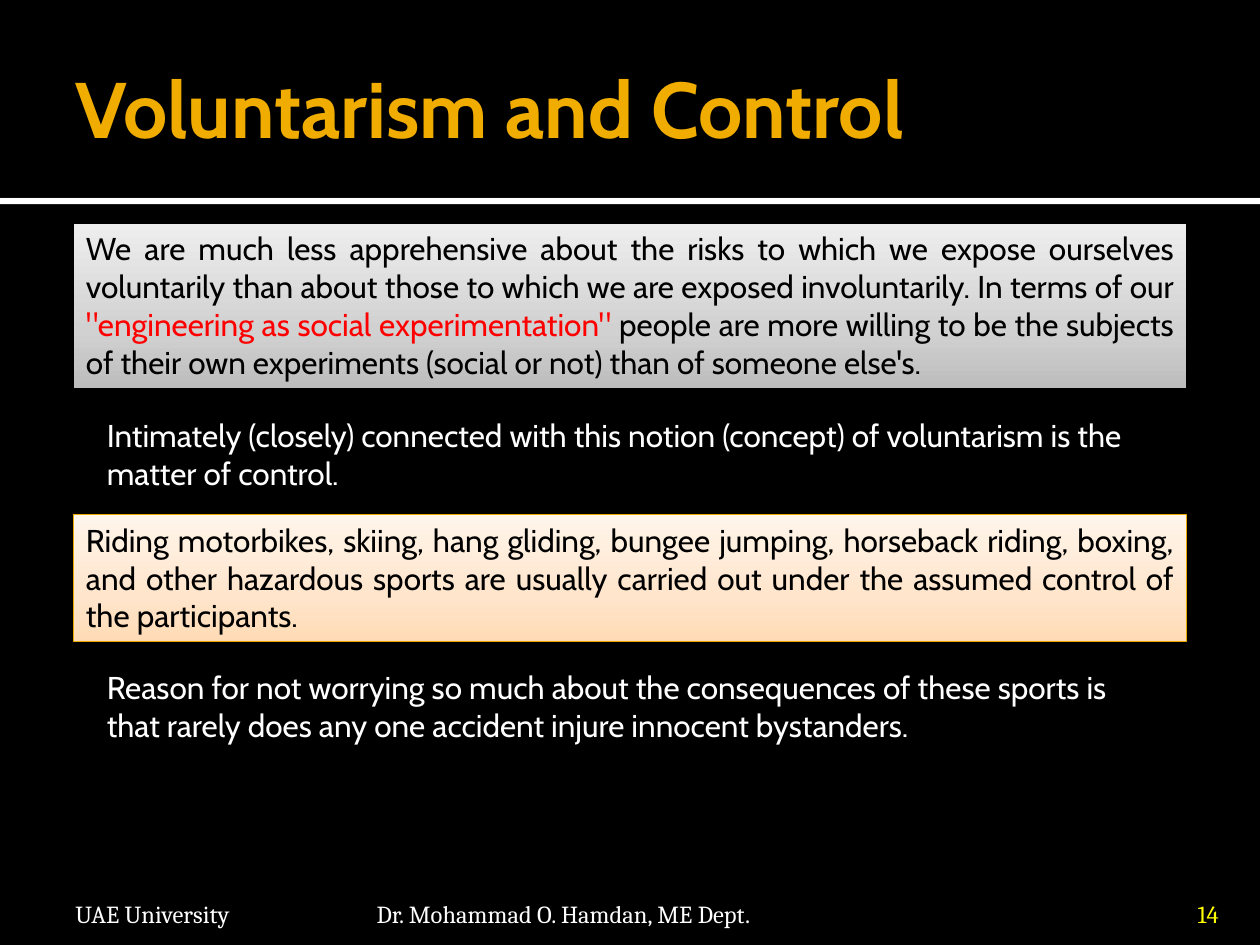
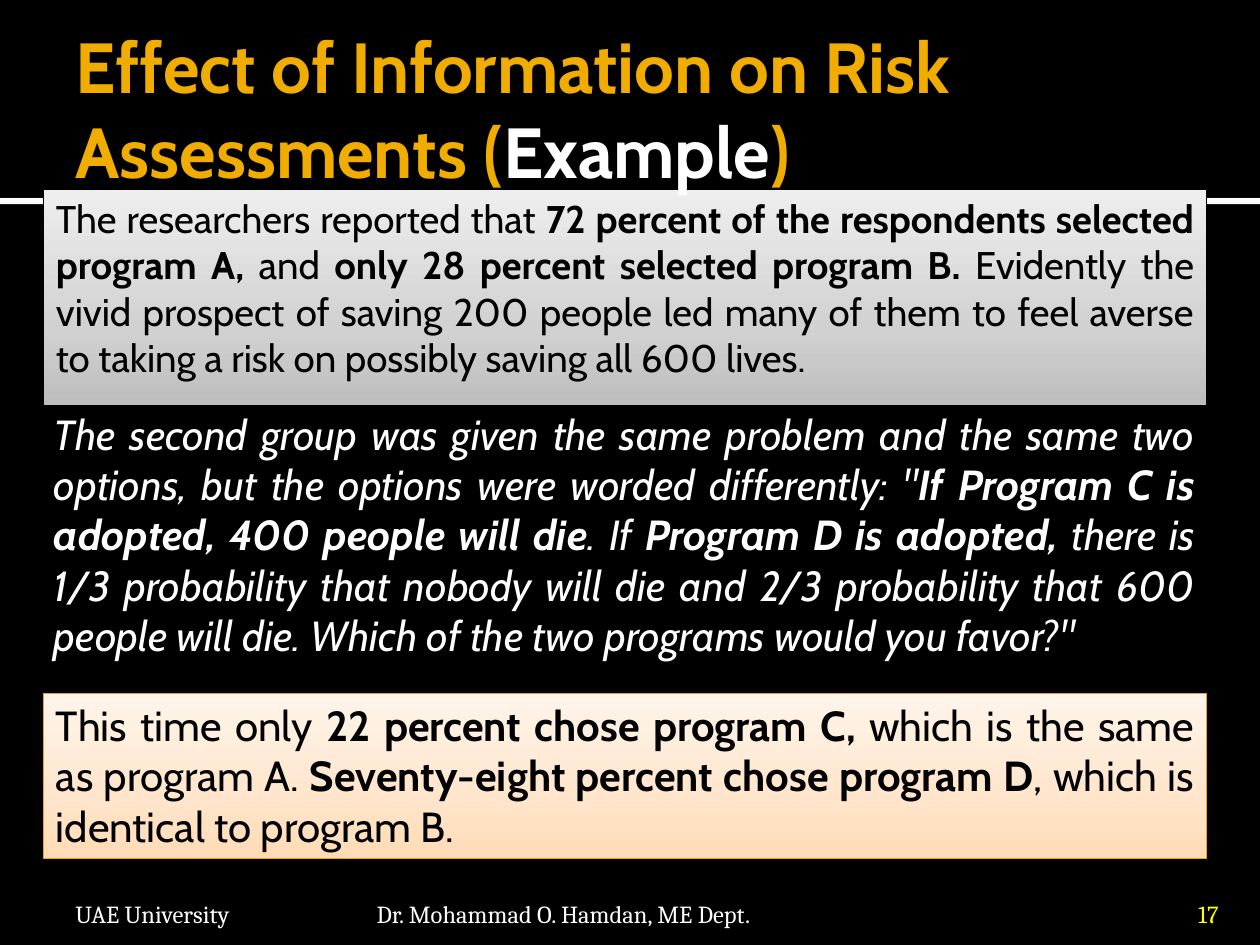
"""Build two lecture slides on risk: a title band, stacked statements and a footer."""
import copy
from dataclasses import dataclass

import pptx
import pptx.dml.color
import pptx.enum.shapes
import pptx.enum.text
import pptx.oxml.ns
import pptx.util

ALIGN = pptx.enum.text.PP_ALIGN
ANCHOR = pptx.enum.text.MSO_ANCHOR
COLUMNS, ROWS = 120, 90
CELL = pptx.util.Inches(10) / COLUMNS


@dataclass(frozen=True)
class Theme:
    """Hold the colours, fonts and type sizes of the deck."""
    black: str = "000000"
    white: str = "FFFFFF"
    gold: str = "F0AD00"
    red: str = "FF0000"
    yellow: str = "FFFF00"
    body_font: str = "Cabin"
    footer_font: str = "Cambria"
    title_size: float = 45
    long_title_size: float = 40.5
    body_size: float = 18
    dense_size: float = 22
    large_size: float = 24
    footer_size: float = 14


@dataclass(frozen=True)
class Panel:
    """Hold the outline and the gradient stops of a filled statement."""
    line: str
    stops: tuple


THEME = Theme()
GREY = Panel(THEME.black, ((0, "BDBDBD"), (0.35, "D1D1D1"), (1, "EEEEEE")))
CREAM = Panel("EBA900", ((0, "FFDBB5"), (0.35, "FFE5CB"), (1, "FFF5EB")))
BOLD = {"bold": True}
ITALIC = {"italic": True}
STRONG = {"bold": True, "italic": True}


def rgb(code):
    """Turn a hex code into a colour."""
    return pptx.dml.color.RGBColor.from_string(code)


def cells(*place):
    """Turn columns and rows of the grid into slide lengths."""
    return [round(value * CELL) for value in place]


def write(shape, spans, size, color, font=THEME.body_font, align=ALIGN.LEFT, anchor=ANCHOR.TOP):
    """Write one paragraph of plain strings and (string, format) pairs."""
    frame = shape.text_frame
    frame.word_wrap = True
    frame.vertical_anchor = anchor
    para = frame.paragraphs[0]
    para.alignment = align
    for part in spans:
        text, changes = (part, {}) if isinstance(part, str) else part
        span = para.add_run()
        span.text = text
        values = {"name": font, "size": pptx.util.Pt(size), "color": color, **changes}
        span.font.color.rgb = rgb(values.pop("color"))
        for name, value in values.items():
            setattr(span.font, name, value)


def add_text(page, place, spans, size, color=THEME.white, **layout):
    """Add a text box without a fill."""
    write(page.shapes.add_textbox(*cells(*place)), spans, size, color, **layout)


def add_rectangle(page, place):
    """Add a rectangle without a shadow."""
    box = page.shapes.add_shape(pptx.enum.shapes.MSO_SHAPE.RECTANGLE, *cells(*place))
    box.shadow.inherit = False
    return box


def add_band(page, place, color):
    """Add a plain band across the page."""
    band = add_rectangle(page, place)
    band.fill.solid()
    band.fill.fore_color.rgb = rgb(color)
    band.line.fill.background()


def add_panel(page, place, panel, spans, size):
    """Add a justified statement on a gradient that darkens downwards."""
    box = add_rectangle(page, place)
    box.fill.gradient()
    box.fill.gradient_angle = 90
    stop_list = next(box.element.iter(pptx.oxml.ns.qn("a:gsLst")))
    stop_list.append(copy.deepcopy(stop_list[-1]))
    for stop, (position, color) in zip(box.fill.gradient_stops, panel.stops):
        stop.position = position
        stop.color.rgb = rgb(color)
    box.line.color.rgb = rgb(panel.line)
    box.line.width = pptx.util.Pt(0.5)
    write(box, spans, size, THEME.black, align=ALIGN.JUSTIFY)


def add_page(deck):
    """Add a black page with the rule below its title area."""
    page = deck.slides.add_slide(deck.slide_layouts[6])
    page.background.fill.solid()
    page.background.fill.fore_color.rgb = rgb(THEME.black)
    add_band(page, (0, 18.84, COLUMNS, 0.6), THEME.white)
    add_band(page, (0, 0, COLUMNS, 18.84), THEME.black)
    return page


def add_title(page, spans, size):
    """Add the bold title, centred in the height of its area."""
    bold_spans = [(text, {**BOLD, **changes}) for text, changes in spans]
    add_text(page, (6, 2, 108, 16.44), bold_spans, size, THEME.gold, anchor=ANCHOR.MIDDLE)


def add_footer(page, number):
    """Add the institution, the lecturer and the page number."""
    for left, width, text, color, align in (
        (6, 28, "UAE University", THEME.white, ALIGN.LEFT),
        (34.68, 72.24, "Dr. Mohammad O. Hamdan, ME Dept.", THEME.white, ALIGN.LEFT),
        (107.64, 9.6, str(number), THEME.yellow, ALIGN.RIGHT),
    ):
        add_text(page, (left, 85, width, 3.6), [text], THEME.footer_size, color,
                 font=THEME.footer_font, align=align)


def build_voluntarism(deck):
    """Build the page on voluntarism and control."""
    page = add_page(deck)
    size = THEME.body_size
    add_panel(page, (7, 21.24, 106, 15.72), GREY, [
        "We are much less apprehensive about the risks to which we expose ourselves voluntarily "
        "than about those to which we are exposed involuntarily. In terms of our ",
        ('"engineering as social experimentation" ', {"color": THEME.red}),
        "people are more willing to be the subjects of their own experiments (social or not) "
        "than of someone else's.",
    ], size)
    add_text(page, (9, 39, 103, 8.5), [
        "Intimately (closely) connected with this notion (concept) of voluntarism is the matter "
        "of control.",
    ], size)
    add_panel(page, (7, 49, 106, 12.12), CREAM, [
        "Riding motorbikes, skiing, hang gliding, bungee jumping, horseback riding, boxing, and "
        "other hazardous sports are usually carried out under the assumed control of the "
        "participants.",
    ], size)
    add_text(page, (9, 63, 101, 8.5), [
        "Reason for not worrying so much about the consequences of these sports is that rarely "
        "does any one accident injure innocent bystanders.",
    ], size)
    add_title(page, [("Voluntarism and Control", {})], THEME.title_size)
    add_footer(page, 14)


def build_risk_example(deck):
    """Build the page on how wording sways risk assessments."""
    page = add_page(deck)
    size = THEME.large_size
    add_panel(page, (4.15, 18, 110.76, 20.64), GREY, [
        "The researchers reported that ",
        ("72 percent of the respondents selected program A, ", BOLD),
        "and ",
        ("only 28 percent selected program B. ", BOLD),
        "Evidently the vivid prospect of saving 200 people led many of them to feel averse to "
        "taking a risk on possibly saving all 600 lives.",
    ], THEME.dense_size)
    add_text(page, (3.95, 38.28, 111, 25.44), [
        ("The second group was given the same problem and the same two options, but the options "
         'were worded differently: "', ITALIC),
        ("If Program C is adopted, 400 people will die", STRONG),
        (". If ", ITALIC),
        ("Program D is adopted, ", STRONG),
        ("there is 1/3 probability that nobody will die and 2/3 probability that 600 people will "
         'die. Which of the two programs would you favor?"', ITALIC),
    ], size, align=ALIGN.JUSTIFY)
    add_panel(page, (4.15, 66, 110.76, 15.72), CREAM, [
        "This time only ",
        ("22 percent chose program C, ", BOLD),
        "which is the same as program A. ",
        ("Seventy-eight percent chose program D", BOLD),
        ", which is identical to program B.",
    ], size)
    add_title(page, [
        ("Effect of Information on Risk Assessments (", {}),
        ("Example", {"color": THEME.white}),
        (")", {}),
    ], THEME.long_title_size)
    add_footer(page, 17)


def main():
    """Build the deck and save it."""
    deck = pptx.Presentation()
    deck.slide_width, deck.slide_height = cells(COLUMNS, ROWS)
    build_voluntarism(deck)
    build_risk_example(deck)
    deck.save("out.pptx")


if __name__ == "__main__":
    main()
